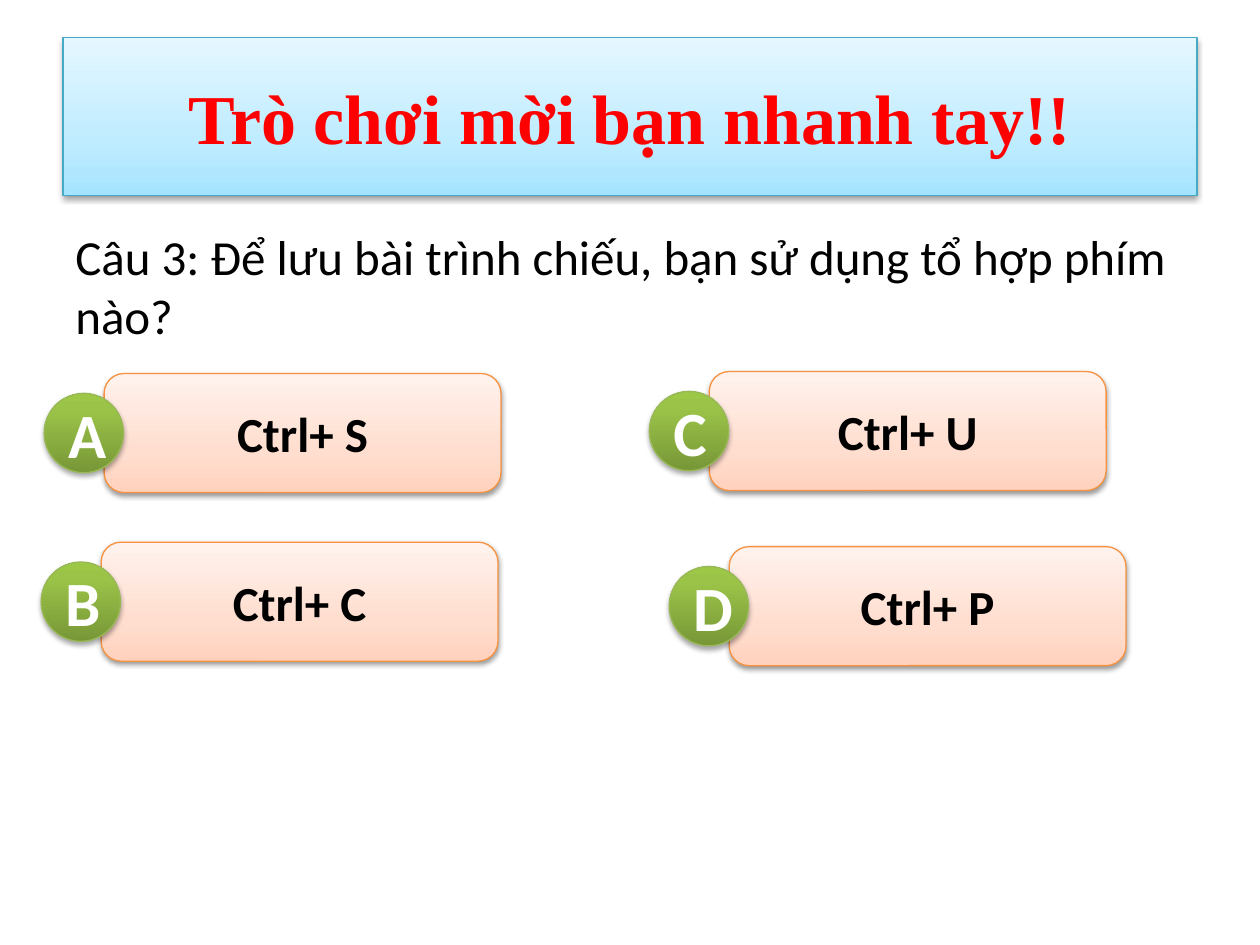
from lxml.etree import SubElement
from pptx import Presentation
from pptx.dml.color import RGBColor
from pptx.enum.shapes import MSO_SHAPE
from pptx.enum.text import MSO_ANCHOR, PP_ALIGN
from pptx.oxml import parse_xml
from pptx.oxml.ns import nsdecls, qn
from pptx.util import Cm, Pt

BLUE = [(0, "A5E4FF"), (35, "BFECFF"), (100, "E5F7FF")]
PEACH = [(0, "FFD2BD"), (35, "FFDED0"), (100, "FFF2ED")]
GREEN = [(0, "779737"), (80, "9BC348"), (100, "9DC746")]
ANSWERS = [
    ("A", "Ctrl+ S", 2.1, 7.53),
    ("B", "Ctrl+ C", 2.04, 10.93),
    ("C", "Ctrl+ U", 14.3, 7.49),
    ("D", "Ctrl+ P", 14.7, 11.02),
]


def rgb(code):
    return RGBColor.from_string(code)


def write(frame, text, size, color="000000", bold=False, name="Calibri",
          align=PP_ALIGN.CENTER):
    frame.word_wrap = True
    frame.text = text
    para = frame.paragraphs[0]
    para.alignment = align
    font = para.runs[0].font
    font.name, font.size, font.bold = name, Pt(size), bold
    font.color.rgb = rgb(color)


def shade(shape, stops):
    """Fill with a gradient that runs from bottom to top."""
    marks = "".join(
        f'<a:gs pos="{pos * 1000}"><a:srgbClr val="{code}"/></a:gs>'
        for pos, code in stops)
    fill = parse_xml(
        f'<a:gradFill {nsdecls("a")} rotWithShape="1"><a:gsLst>{marks}</a:gsLst>'
        '<a:lin ang="16200000" scaled="0"/></a:gradFill>')
    shape.element.spPr.find(qn("a:prstGeom")).addnext(fill)


def drop(shape, dist, alpha):
    """Cast a soft black shadow straight down."""
    shape.shadow.inherit = False
    effects = shape.element.spPr.find(qn("a:effectLst"))
    cast = SubElement(effects, qn("a:outerShdw"), blurRad=str(Pt(3.1)),
                      dist=str(Pt(dist)), dir="5400000", rotWithShape="0")
    black = SubElement(cast, qn("a:srgbClr"), val="000000")
    SubElement(black, qn("a:alpha"), val=str(alpha * 1000))


def panel(slide, kind, box, stops, edge, dist=1.6, alpha=38):
    shape = slide.shapes.add_shape(kind, *map(Cm, box))
    shade(shape, stops)
    shape.line.color.rgb = rgb(edge)
    shape.line.width = Pt(0.75)
    drop(shape, dist, alpha)
    frame = shape.text_frame
    frame.vertical_anchor = MSO_ANCHOR.MIDDLE
    return frame


def answer(slide, letter, text, left, top):
    frame = panel(slide, MSO_SHAPE.ROUNDED_RECTANGLE, (left, top, 8, 2.4),
                  PEACH, "F69240")
    write(frame, text, 28, bold=True)
    badge = panel(slide, MSO_SHAPE.OVAL, (left - 1.21, top + 0.4, 1.6, 1.6),
                  GREEN, "98B955", 1.8, 35)
    write(badge, letter, 36, "FFFFFF", True)


def main():
    deck = Presentation()
    deck.slide_width, deck.slide_height = Cm(25.4), Cm(19.05)
    slide = deck.slides.add_slide(deck.slide_layouts[6])

    query = slide.shapes.add_textbox(Cm(1.27), Cm(4.45), Cm(23.62), Cm(2.7))
    write(query.text_frame,
          "Câu 3: Để lưu bài trình chiếu, bạn sử dụng tổ hợp phím nào?", 28,
          align=PP_ALIGN.LEFT)

    title = panel(slide, MSO_SHAPE.RECTANGLE, (1.27, 0.76, 22.86, 3.18),
                  BLUE, "46AAC5")
    write(title, "Trò chơi mời bạn nhanh tay!!", 40, "FF0000", True,
          "Times New Roman")

    for item in ANSWERS:
        answer(slide, *item)
    deck.save("out.pptx")


if __name__ == "__main__":
    main()
